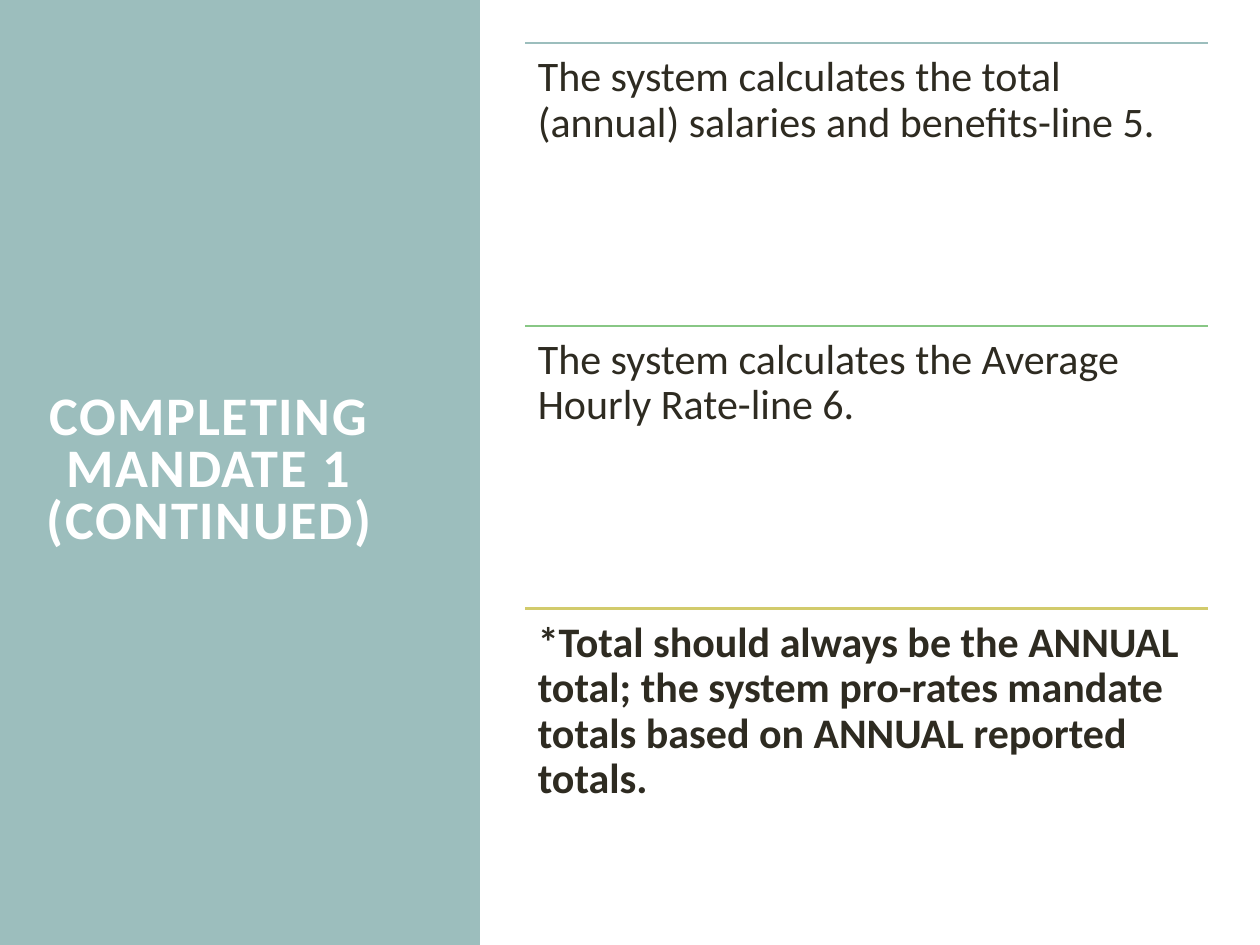
import dataclasses
import pptx
import pptx.dml.color
import pptx.enum.shapes
import pptx.enum.text
import pptx.oxml
import pptx.util


@dataclasses.dataclass
class Theme:
    font: str = "Calibri"
    panel: str = "9CBEBD"
    head: str = "FFFFFF"
    ink: str = "2E2B21"
    rules: tuple = ("9CBEBD", "88C785", "D2CB6C")
    big: int = 31
    body: int = 24
    rule: float = 1.25


theme = Theme()
inch = pptx.util.Inches
anchor = pptx.enum.text.MSO_ANCHOR


def color(code):
    return pptx.dml.color.RGBColor.from_string(code)


def add_run(para, text, size, code, bold):
    run = para.add_run()
    run.text = text
    run.font.name = theme.font
    run.font.size = pptx.util.Pt(size)
    run.font.bold = bold
    run.font.color.rgb = color(code)
    return run


deck = pptx.Presentation()
deck.slide_width, deck.slide_height = inch(10), inch(7.5)
wide, high = deck.slide_width, deck.slide_height
slide = deck.slides.add_slide(deck.slide_layouts[5])

# Side panel, placed behind the title
panel = slide.shapes.add_shape(
    pptx.enum.shapes.MSO_SHAPE.RECTANGLE, 0, 0, int(wide * 0.381), high)
panel.shadow.inherit = False
panel.fill.solid()
panel.fill.fore_color.rgb = color(theme.panel)
panel.line.fill.background()
slide.shapes.title.element.addprevious(panel.element)

# Title
title = slide.shapes.title
title.left, title.top = inch(0.26), inch(0.7)
title.width, title.height = inch(2.8), inch(6.09)
frame = title.text_frame
frame.word_wrap = True
frame.auto_size = pptx.enum.text.MSO_AUTO_SIZE.NONE
frame.vertical_anchor = anchor.MIDDLE
para = frame.paragraphs[0]
para.alignment = pptx.enum.text.PP_ALIGN.CENTER
para.line_spacing = 0.8
for row, text in enumerate(("COMPLETING MANDATE 1", "(CONTINUED)")):
    if row:
        para.add_line_break()
    run = add_run(para, text, theme.big, theme.head, True)
    run.font._element.set("spc", "100")

# Three equal rows, each a rule with its text below
notes = (
    ("The system calculates the total (annual) salaries and benefits-line 5.", False),
    ("The system calculates the Average Hourly Rate-line 6.", False),
    ("*Total should always be the ANNUAL total; the system pro-rates mandate "
     "totals based on ANNUAL reported totals.", True),
)
left, span = int(wide * 0.417), int(wide * 0.542)
first, step = inch(0.34), inch(2.245)
for row, ((text, bold), code) in enumerate(zip(notes, theme.rules)):
    top = first + row * step
    rule = slide.shapes.add_connector(
        pptx.enum.shapes.MSO_CONNECTOR.STRAIGHT, left, top, left + span, top)
    rule.line.color.rgb = color(code)
    rule.line.width = pptx.util.Pt(theme.rule)
    rule._element.spPr.append(pptx.oxml.parse_xml(
        '<a:effectLst xmlns:a="http://schemas.openxmlformats.org/drawingml/2006/main"/>'))

    frame = slide.shapes.add_textbox(left, top, span, step).text_frame
    frame.word_wrap = True
    frame.vertical_anchor = anchor.TOP
    frame.margin_left = frame.margin_right = inch(0.1)
    frame.margin_top = frame.margin_bottom = inch(0.1)
    para = frame.paragraphs[0]
    para.line_spacing = 0.9
    add_run(para, text, theme.body, theme.ink, bold)

deck.save("out.pptx")
